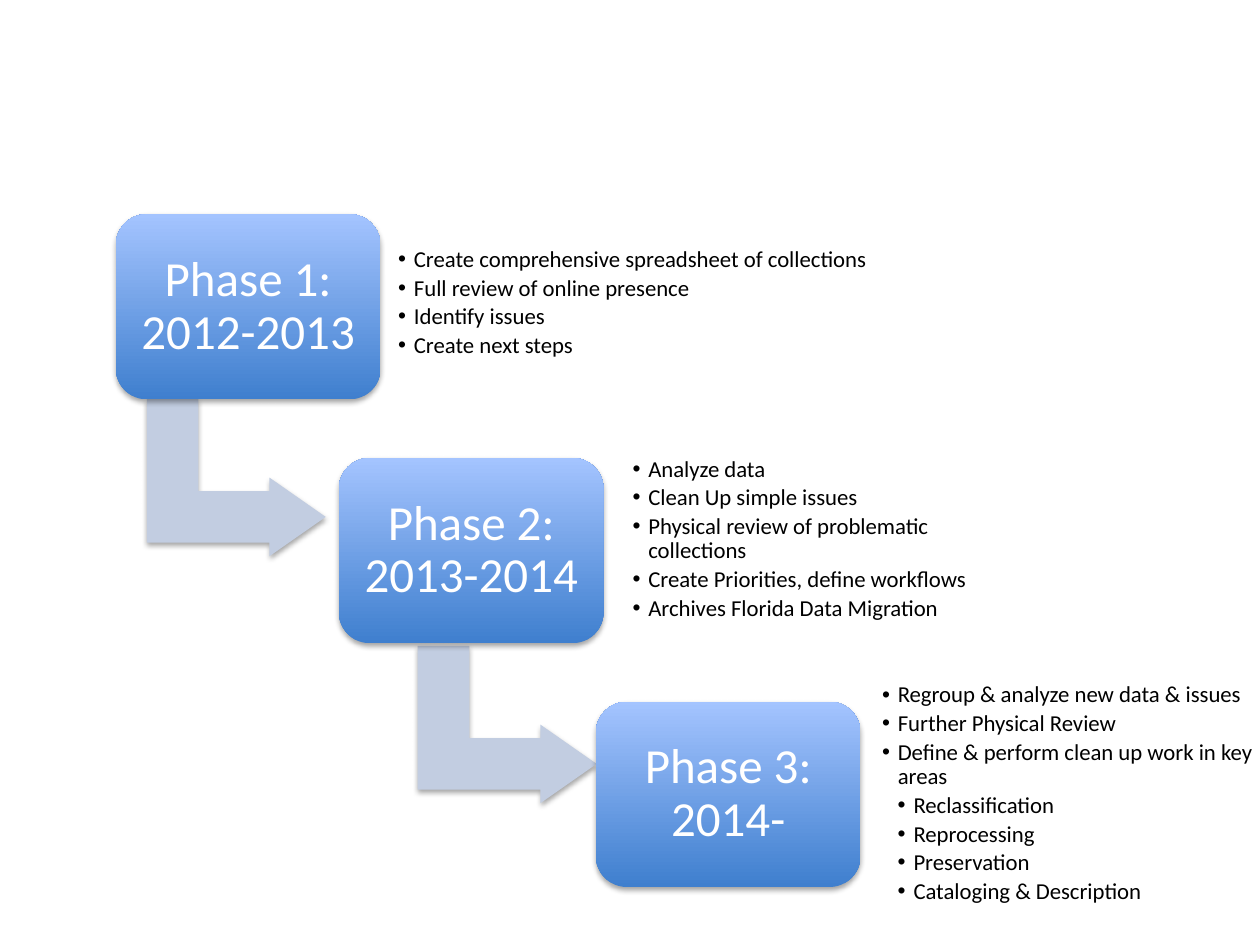
from lxml import etree
from pptx import Presentation
from pptx.dml.color import RGBColor
from pptx.enum import shapes, text
from pptx.oxml import ns
from pptx.util import Inches, Pt

HUES = {"arrow": "C2CDE1", "low": "3F7FCE", "high": "A4C4FF",
        "light": "FFFFFF", "ink": "000000"}

PHASES = [
    ("Phase 1: 2012-2013", 0.92, (3.11, 1.47, 4.29, 1.87), 0.05, [
        (1, "Create comprehensive spreadsheet of collections"),
        (1, "Full review of online presence"),
        (1, "Identify issues"),
        (1, "Create next steps")]),
    ("Phase 2: 2013-2014", 2.69, (4.97, 3.26, 3.19, 2.04), 0.05, [
        (1, "Analyze data"),
        (1, "Clean Up simple issues"),
        (1, "Physical review of problematic collections"),
        (1, "Create Priorities, define workflows"),
        (1, "Archives Florida Data Migration")]),
    ("Phase 3: 2014-", 4.73, (6.93, 5.31, 3.32, 1.98), 0.07, [
        (1, "Regroup & analyze new data & issues"),
        (1, "Further Physical Review"),
        (1, "Define & perform clean up work in key areas"),
        (2, "Reclassification"),
        (2, "Reprocessing"),
        (2, "Preservation"),
        (2, "Cataloging & Description")]),
]
ARROWS = [(1.25, 3.08), (3.4, 5.04)]


def hue(name):
    return RGBColor.from_string(HUES[name])


def add_shade(shape):
    shape.shadow.inherit = False
    effects = shape._element.spPr.find(ns.qn("a:effectLst"))
    outer = etree.SubElement(effects, ns.qn("a:outerShdw"), blurRad=str(Pt(3.1)),
                             dist=str(Pt(1.8)), dir="5400000", rotWithShape="0")
    color = etree.SubElement(outer, ns.qn("a:srgbClr"), val=HUES["ink"])
    etree.SubElement(color, ns.qn("a:alpha"), val="35000")


def set_frame(frame, inset):
    frame.word_wrap = True
    frame.auto_size = text.MSO_AUTO_SIZE.NONE
    frame.vertical_anchor = text.MSO_ANCHOR.MIDDLE
    frame.margin_left = frame.margin_right = Inches(inset)
    frame.margin_top = frame.margin_bottom = Inches(inset)


def set_font(para, size, name):
    para.line_spacing = 0.9
    para.font.name = "Calibri"
    para.font.size = Pt(size)
    para.font.bold = False
    para.font.color.rgb = hue(name)


def add_arrow(slide, left, top):
    arrow = slide.shapes.add_shape(shapes.MSO_SHAPE.BENT_UP_ARROW, Inches(left),
                                   Inches(top), Inches(1.25), Inches(1.42))
    arrow.rotation = 90
    for i, value in enumerate((0.328, 0.25, 0.358)):
        arrow.adjustments[i] = value
    arrow.fill.solid()
    arrow.fill.fore_color.rgb = hue("arrow")
    arrow.line.fill.background()
    add_shade(arrow)


def add_phase(slide, label, left, top):
    box = slide.shapes.add_shape(shapes.MSO_SHAPE.ROUNDED_RECTANGLE, Inches(left),
                                 Inches(top), Inches(2.1), Inches(1.47))
    box.fill.gradient()
    box.fill.gradient_angle = 90
    for stop, name, place in zip(box.fill.gradient_stops, ("low", "high"), (0, 1)):
        stop.color.rgb = hue(name)
        stop.position = place
    box.line.fill.background()
    add_shade(box)
    set_frame(box.text_frame, 0.12)
    para = box.text_frame.paragraphs[0]
    para.text = label
    para.alignment = text.PP_ALIGN.CENTER
    set_font(para, 28, "light")


def add_bullet(para, level):
    props = para._p.get_or_add_pPr()
    props.set("marL", str(Inches(0.125 * level)))
    props.set("indent", str(-Inches(0.125)))
    etree.SubElement(props, ns.qn("a:buFont"), typeface="Arial")
    etree.SubElement(props, ns.qn("a:buChar"), char="•")


def fill_list(holder, place, inset, items):
    holder.left, holder.top, holder.width, holder.height = map(Inches, place)
    frame = holder.text_frame
    set_frame(frame, inset)
    for i, (level, line) in enumerate(items):
        para = frame.add_paragraph() if i else frame.paragraphs[0]
        para.text = line
        para.level = level
        add_bullet(para, level)
        para.space_before = Pt(0)
        para.space_after = Pt(2.3)
        set_font(para, 13, "ink")


def main():
    deck = Presentation()
    deck.slide_width, deck.slide_height = Inches(10), Inches(7.5)
    slide = deck.slides.add_slide(deck.slide_layouts[4])
    title, *bodies = list(slide.placeholders)
    for spare in (title, *bodies[len(PHASES):]):
        spare._element.getparent().remove(spare._element)
    for left, top in ARROWS:
        add_arrow(slide, left, top)
    for i, (label, left, place, inset, items) in enumerate(PHASES):
        add_phase(slide, label, left, 1.7 + 1.935 * i)
        fill_list(bodies[i], place, inset, items)
    deck.save("out.pptx")


if __name__ == "__main__":
    main()
